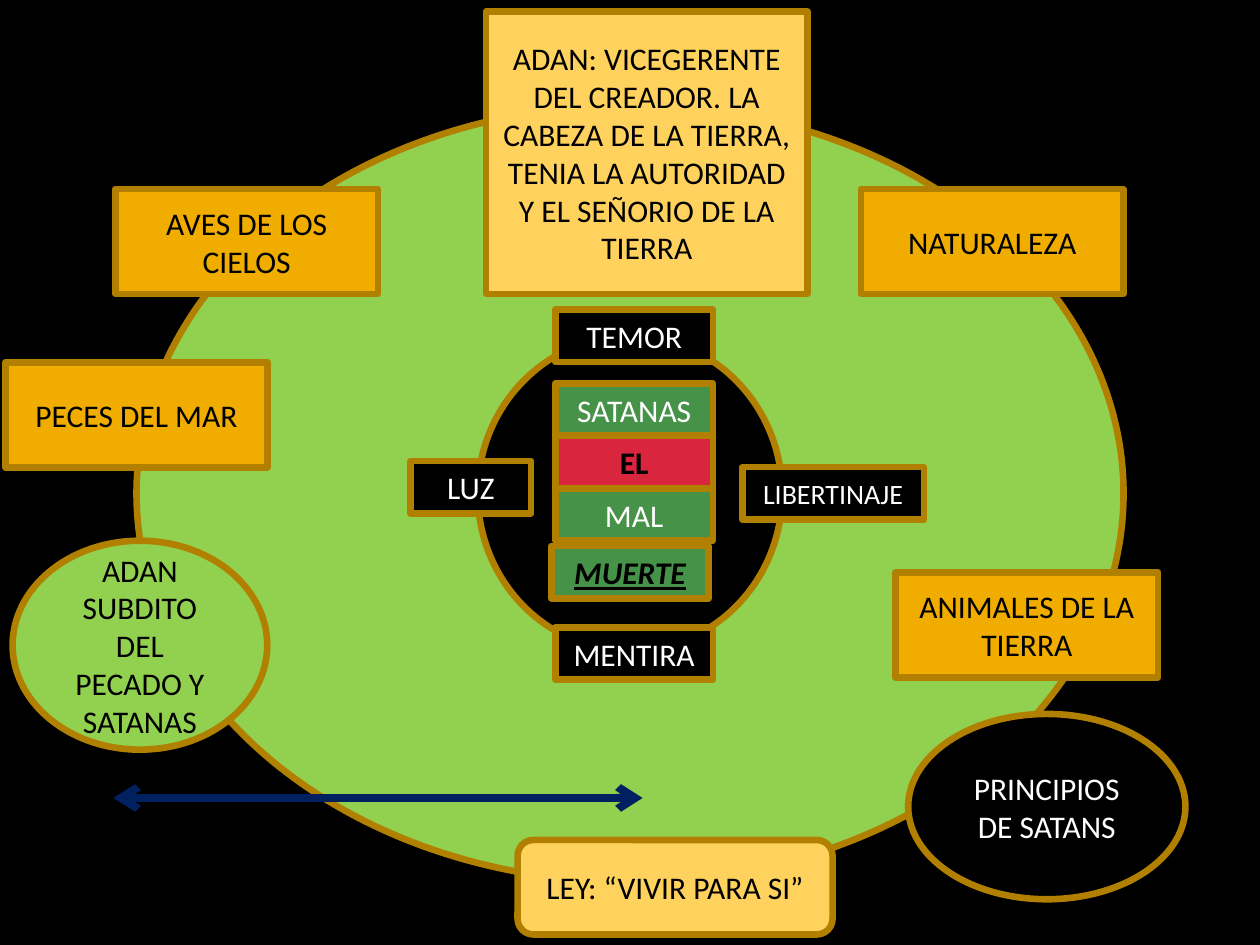
from lxml.etree import SubElement
from pptx import Presentation
from pptx.dml.color import RGBColor
from pptx.enum.shapes import MSO_CONNECTOR, MSO_SHAPE
from pptx.enum.text import MSO_ANCHOR, PP_ALIGN
from pptx.oxml.ns import qn
from pptx.util import Inches, Pt

THEME = {
    "black": "000000", "white": "FFFFFF", "lime": "92D050",
    "green": "479249", "red": "D9253E", "gold": "F0AD00",
    "cream": "FFD25D", "edge": "B28000", "navy": "002060",
    "font": "Calibri", "body": 18, "small": 16,
    "rim": 3.78, "arrow": 4.5,
}
BOX, OVAL, ROUND = MSO_SHAPE.RECTANGLE, MSO_SHAPE.OVAL, MSO_SHAPE.ROUNDED_RECTANGLE

deck = Presentation()
deck.slide_width, deck.slide_height = Inches(10), Inches(7.5)
# A grid of 240 columns by 180 rows
COL, ROW = deck.slide_width / 240, deck.slide_height / 180


def color(name):
    return RGBColor.from_string(THEME[name])


def add_node(text, kind, left, top, width, height, fill,
             ink="black", size="body", bold=None, italic=None, under=None):
    """Draw a rimmed shape, placed in grid cells, with centred text."""
    node = slide.shapes.add_shape(kind, round(left * COL), round(top * ROW),
                                  round(width * COL), round(height * ROW))
    node.shadow.inherit = False
    node.fill.solid()
    node.fill.fore_color.rgb = color(fill)
    node.line.color.rgb = color("edge")
    node.line.width = Pt(THEME["rim"])
    frame = node.text_frame
    frame.word_wrap = True
    frame.vertical_anchor = MSO_ANCHOR.MIDDLE
    for i, words in enumerate(text.split("\n") if text else []):
        para = frame.add_paragraph() if i else frame.paragraphs[0]
        para.alignment = PP_ALIGN.CENTER
        run = para.add_run()
        run.text = words
        font = run.font
        font.name, font.size = THEME["font"], Pt(THEME[size])
        font.color.rgb = color(ink)
        font.bold, font.italic, font.underline = bold, italic, under


slide = deck.slides.add_slide(deck.slide_layouts[6])
slide.background.fill.solid()
slide.background.fill.fore_color.rgb = color("black")

# Earth and its dark core
add_node("", OVAL, 26, 20, 188, 148, "lime")
add_node("", OVAL, 91, 64, 58, 60, "black")

# Labels in the core
tag = {"width": 30, "height": 10}
mid = 105.8
add_node("MUERTE", BOX, 105, 104, fill="green",
         bold=True, italic=True, under=True, **tag)
add_node("MENTIRA", BOX, mid, 119.5, fill="black", ink="white", **tag)
add_node("MAL", BOX, mid, 93, fill="green", ink="white", **tag)
add_node("EL", BOX, mid, 83, fill="red", bold=True, **tag)
add_node("LUZ", BOX, 78.2, 87.8, 23, 10, "black", ink="white")
add_node("LIBERTINAJE", BOX, 141.4, 89, 34.6, 10, "black",
         ink="white", size="small")
add_node("TEMOR", BOX, mid, 59, fill="black", ink="white", **tag)
add_node("SATANAS", BOX, mid, 73, fill="green", ink="white", **tag)

# Head and law
add_node("ADAN: VICEGERENTE DEL CREADOR. LA\n"
         "CABEZA DE LA TIERRA, TENIA LA AUTORIDAD Y EL SEÑORIO DE LA TIERRA",
         BOX, 92.6, 2.2, 61.2, 53.8, "cream")
add_node("LEY: “VIVIR PARA SI”", ROUND, 98.6, 160, 60, 18, "cream")

# Realms around the rim
for text, left, top in (
    ("AVES DE LOS CIELOS", 22, 36),
    ("NATURALEZA", 164, 36),
    ("ANIMALES DE LA TIERRA", 170.6, 109),
    ("PECES DEL MAR", 1, 69),
):
    add_node(text, BOX, left, top, 50, 20, "gold")

add_node("ADAN SUBDITO DEL PECADO Y SATANAS", OVAL, 2.4, 103, 48.5, 39.8, "lime")
add_node("PRINCIPIOS DE SATANS", OVAL, 173, 136, 52.8, 35.3, "black", ink="white")

# Two-way arrow
level = round(152 * ROW)
arrow = slide.shapes.add_connector(MSO_CONNECTOR.STRAIGHT, round(21.6 * COL), level,
                                   round(122.4 * COL), level)
arrow.line.color.rgb = color("navy")
arrow.line.width = Pt(THEME["arrow"])
stroke = arrow.line._get_or_add_ln()
for end in ("a:headEnd", "a:tailEnd"):
    SubElement(stroke, qn(end), type="arrow")
SubElement(arrow._element.spPr, qn("a:effectLst"))

deck.save("out.pptx")
